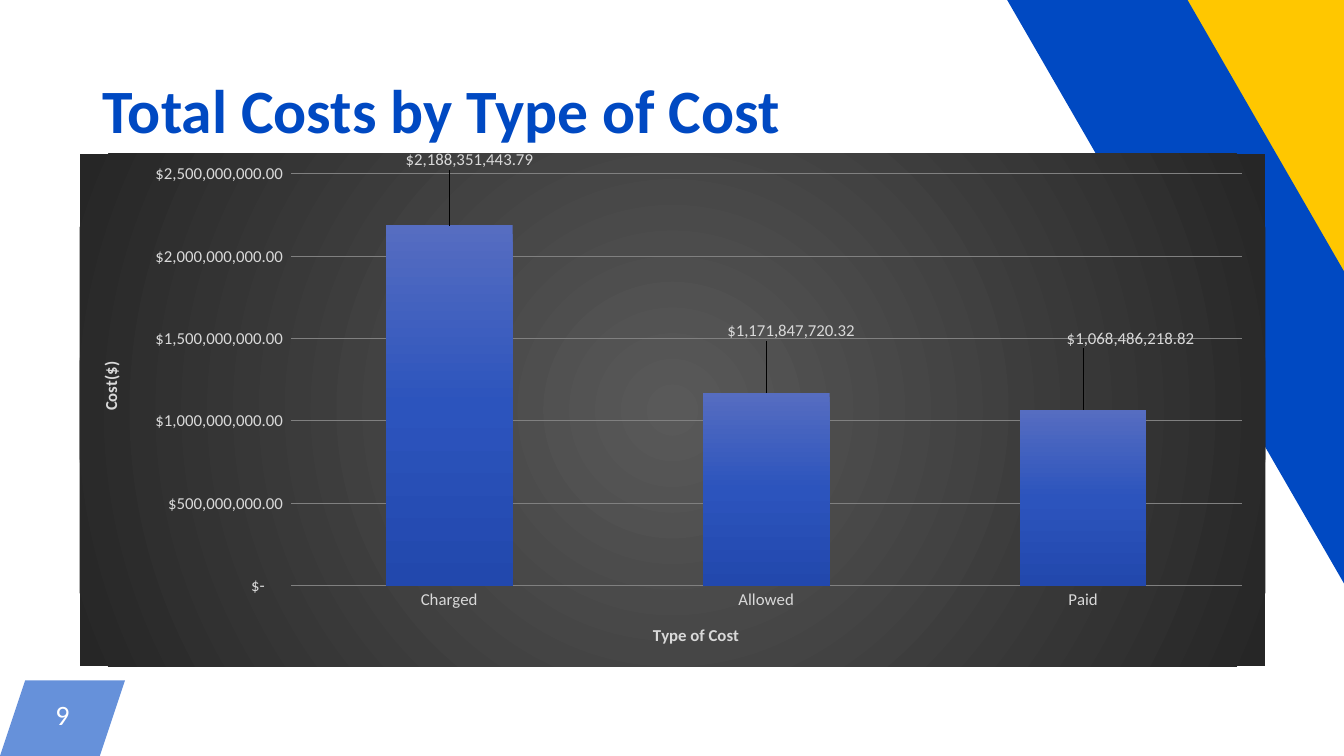
from lxml import etree
from pptx import Presentation
from pptx.chart.data import CategoryChartData
from pptx.dml.color import RGBColor
from pptx.enum.chart import XL_CHART_TYPE, XL_LABEL_POSITION, XL_TICK_MARK
from pptx.enum.text import MSO_ANCHOR, PP_ALIGN
from pptx.oxml import parse_xml
from pptx.oxml.ns import nsdecls, qn
from pptx.util import Inches, Pt

COLUMN = XL_CHART_TYPE.COLUMN_CLUSTERED
OUTSIDE = XL_LABEL_POSITION.OUTSIDE_END
NO_TICK = XL_TICK_MARK.NONE
MIDDLE = MSO_ANCHOR.MIDDLE
CENTER, LEFT = PP_ALIGN.CENTER, PP_ALIGN.LEFT

TITLE = "Total Costs by Type of Cost"
PAGE = "9"
COSTS = {"Charged": 2188351443.79, "Allowed": 1171847720.32, "Paid": 1068486218.82}
LABEL_SHIFTS = [(0.017, -0.1), (0.021, -0.093), (0.04, -0.112)]
AXIS_TITLES = {"category": ("Type of Cost", 0.481, 0.911), "value": ("Cost($)", 0.014, 0.4)}
MONEY = '_("$"* #,##0.00_);_("$"* \\(#,##0.00\\);_("$"* "-"??_);_(@_)'

THEME = {
    "font": "Calibri", "blue": "0049C2", "yellow": "FFC700", "white": "FFFFFF",
    "label": "D9D9D9", "grid": "808080",
    "backdrop": [(0, "595959"), (100, "262626")],
    "bars": [(0, "566DC1"), (50, "2C54BD"), (100, "2248AD")],
    "title_pt": 44, "page_pt": 20, "chart_pt": 12,
}

W, H = 13.33, 7.5
BADGE_W, BADGE_H, SLANT = 1.24, 0.75, 0.25
BADGE_TOP = H - BADGE_H
YELLOW_BAND = [(10.47, -2.17), (12.18, -3.15), (17.06, 5.36), (15.35, 6.33)]
BLUE_BAND = [(9.47, -0.9), (10.81, -1.68), (15.71, 6.82), (14.37, 7.59)]
BADGE = [(SLANT, BADGE_TOP), (BADGE_W, BADGE_TOP), (BADGE_W - SLANT, H), (0, H)]
TITLE_BOX = (0.92, 0.4, 11.5, 1.45)
CHART_BOX = (0.79, 1.49, 11.76, 5.12)
PLOT = (0.178, 0.039, 0.802, 0.804)
UNITS = 100


def color(name):
    return RGBColor.from_string(THEME[name])


def style(font, size, name, bold=False):
    font.name = THEME["font"]
    font.size = Pt(THEME[size])
    font.color.rgb = color(name)
    font.bold = bold


def polygon(slide, points, fill, alpha=None):
    corners = [(round(x * UNITS), round(y * UNITS)) for x, y in points]
    builder = slide.shapes.build_freeform(*corners[0], scale=Inches(1) / UNITS)
    builder.add_line_segments(corners[1:], close=True)
    sp = builder.convert_to_shape()
    sp.shadow.inherit = False
    sp.fill.solid()
    sp.fill.fore_color.rgb = color(fill)
    sp.line.fill.background()
    if alpha:
        clr = sp.fill._xPr.find(".//" + qn("a:srgbClr"))
        etree.SubElement(clr, qn("a:alpha")).set("val", str(alpha * 1000))


def gradient(stops, direction):
    items = "".join(
        f'<a:gs pos="{pos * 1000}"><a:srgbClr val="{rgb}"/></a:gs>' for pos, rgb in stops)
    return f"<a:gradFill><a:gsLst>{items}</a:gsLst>{direction}</a:gradFill>"


def sp_pr(fill):
    return parse_xml(f'<c:spPr {nsdecls("c", "a")}>{fill}<a:ln><a:noFill/></a:ln></c:spPr>')


def manual_layout(x, y, size=None, edge=True):
    parts = []
    if size:
        parts.append(("layoutTarget", "inner"))
    if edge:
        parts += [("xMode", "edge"), ("yMode", "edge")]
    parts += [("x", x), ("y", y)]
    if size:
        parts += [("w", size[0]), ("h", size[1])]
    items = "".join(f'<c:{tag} val="{val}"/>' for tag, val in parts)
    return parse_xml(
        f'<c:layout {nsdecls("c")}><c:manualLayout>{items}</c:manualLayout></c:layout>')


def set_layout(parent, layout, index):
    old = parent.find(qn("c:layout"))
    if old is None:
        parent.insert(index, layout)
    else:
        parent.replace(old, layout)


def hide_leader_lines(dlbls):
    for line in dlbls.findall(qn("c:showLeaderLines")):
        dlbls.remove(line)
    dlbls.append(parse_xml(
        f'<c:extLst {nsdecls("c")}><c:ext uri="{{CE6537A1-D6FC-4f65-9D91-7224C49458BB}}" '
        'xmlns:c15="http://schemas.microsoft.com/office/drawing/2012/chart">'
        '<c15:showLeaderLines val="0"/></c:ext></c:extLst>'))


def format_axis(axis, title, x, y):
    axis.major_tick_mark = axis.minor_tick_mark = NO_TICK
    axis.format.line.fill.background()
    style(axis.tick_labels.font, "chart_pt", "label")
    tf = axis.axis_title.text_frame
    tf.text = title
    style(tf.paragraphs[0].runs[0].font, "chart_pt", "label", True)
    set_layout(axis.axis_title._element, manual_layout(x, y), 1)
    return tf


def add_cost_chart(slide):
    data = CategoryChartData(number_format=MONEY)
    data.categories = list(COSTS)
    data.add_series("Series 1", list(COSTS.values()))
    chart = slide.shapes.add_chart(COLUMN, *map(Inches, CHART_BOX), data).chart
    chart.has_legend = chart.has_title = False
    style(chart.font, "chart_pt", "label")
    root = chart._chartSpace
    circle = '<a:path path="circle"><a:fillToRect l="50000" t="50000" r="50000" b="50000"/></a:path>'
    root.find(qn("c:chart")).addnext(sp_pr(gradient(THEME["backdrop"], circle)))
    set_layout(root.find(".//" + qn("c:plotArea")), manual_layout(*PLOT[:2], PLOT[2:]), 0)

    format_axis(chart.category_axis, *AXIS_TITLES["category"])
    axis = chart.value_axis
    body = format_axis(axis, *AXIS_TITLES["value"])._txBody.bodyPr
    body.set("rot", "-5400000")
    body.set("vert", "horz")
    axis.minimum_scale, axis.maximum_scale, axis.major_unit = 0, 2.5e9, 5e8
    axis.tick_labels.number_format = MONEY
    axis.tick_labels.number_format_is_linked = False
    axis.major_gridlines.format.line.color.rgb = color("grid")
    axis.major_gridlines.format.line.width = Pt(0.75)

    plot = chart.plots[0]
    plot.gap_width = 150
    plot.vary_by_categories = False
    series = plot.series[0]
    ser = series._element
    ser.replace(ser.get_or_add_spPr(),
                sp_pr(gradient(THEME["bars"], '<a:lin ang="5400000" scaled="0"/>')))
    labels = series.data_labels
    labels.show_value = True
    labels.number_format = MONEY
    labels.number_format_is_linked = False
    labels.position = OUTSIDE
    style(labels.font, "chart_pt", "label")
    for i, shift in enumerate(LABEL_SHIFTS):
        label = series.points[i].data_label
        style(label.font, "chart_pt", "label")
        label.position = OUTSIDE
        dlbl = ser.dLbls.findall(qn("c:dLbl"))[i]
        set_layout(dlbl, manual_layout(*shift, edge=False), 1)
        num = parse_xml(f'<c:numFmt {nsdecls("c")} sourceLinked="0"/>')
        num.set("formatCode", MONEY)
        dlbl.insert(2, num)
    hide_leader_lines(ser.dLbls)


def main():
    prs = Presentation()
    prs.slide_width, prs.slide_height = Inches(W), Inches(H)
    slide = prs.slides.add_slide(prs.slide_layouts[5])
    polygon(slide, BADGE, "blue", 60)
    polygon(slide, YELLOW_BAND, "yellow")
    polygon(slide, BLUE_BAND, "blue")

    page = slide.shapes.add_textbox(
        *map(Inches, (SLANT, BADGE_TOP, BADGE_W - 2 * SLANT, BADGE_H)))
    title = slide.shapes.title
    title.left, title.top, title.width, title.height = map(Inches, TITLE_BOX)
    slide.shapes._spTree.append(title._element)
    for sp, text, size, name, align, spacing in (
            (page, PAGE, "page_pt", "white", CENTER, Pt(17.7)),
            (title, TITLE, "title_pt", "blue", LEFT, 0.9)):
        tf = sp.text_frame
        tf.text = text
        tf.word_wrap = True
        tf.vertical_anchor = MIDDLE
        p = tf.paragraphs[0]
        p.alignment = align
        p.line_spacing = spacing
        style(p.runs[0].font, size, name, sp is title)
    add_cost_chart(slide)
    prs.save("out.pptx")


if __name__ == "__main__":
    main()
